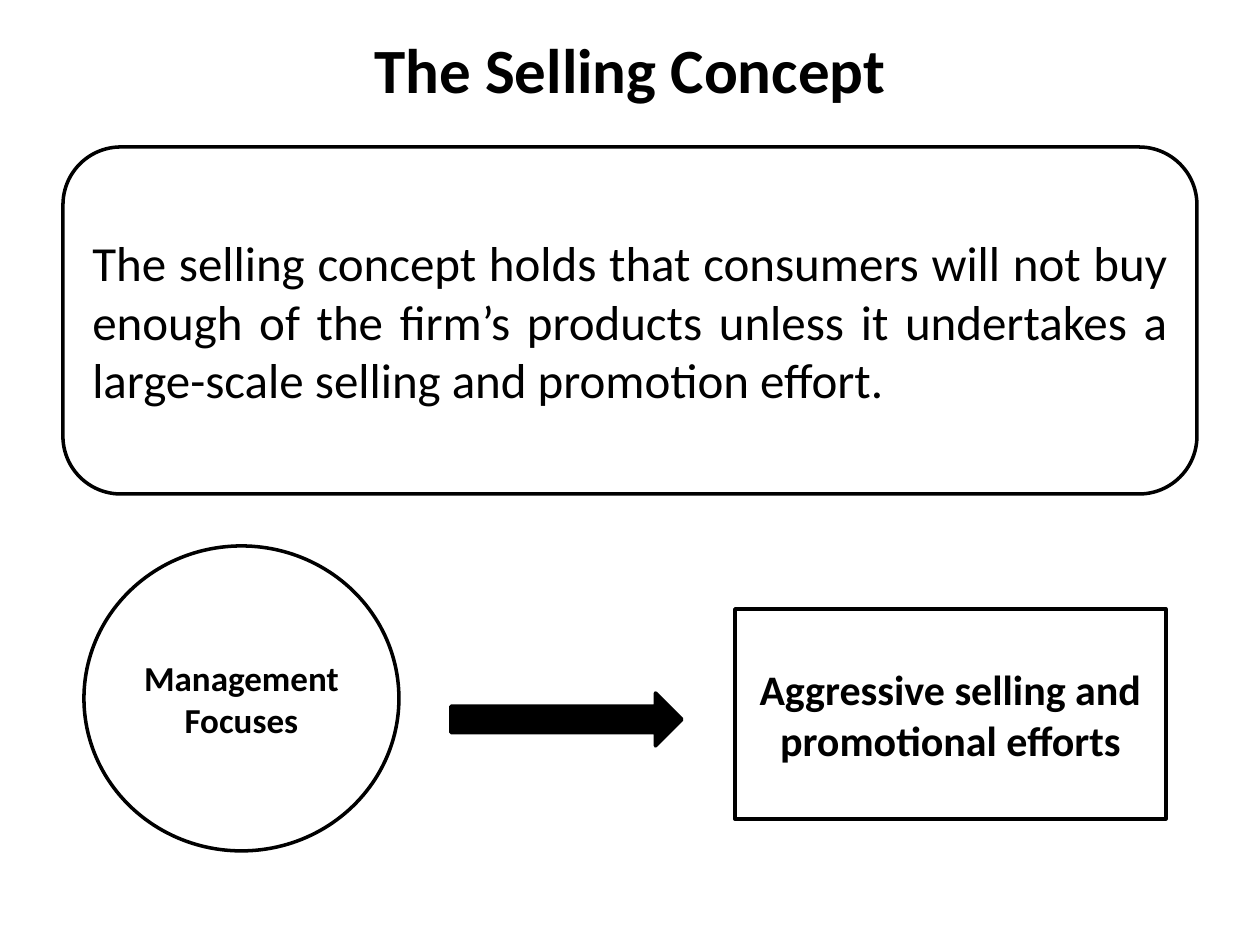
from pptx import Presentation
from pptx.dml.color import RGBColor
from pptx.enum.shapes import MSO_SHAPE
from pptx.enum.text import MSO_ANCHOR, PP_ALIGN
from pptx.util import Emu, Pt

ROUNDED, RECT = MSO_SHAPE.ROUNDED_RECTANGLE, MSO_SHAPE.RECTANGLE
OVAL, ARROW = MSO_SHAPE.OVAL, MSO_SHAPE.RIGHT_ARROW
CENTER, JUSTIFY = PP_ALIGN.CENTER, PP_ALIGN.JUSTIFY
MIDDLE = MSO_ANCHOR.MIDDLE

PX = 914400 // 126
FONT, BLACK, WHITE = "Calibri", "000000", "FFFFFF"

# Content: text, size, bold, alignment; boxes are left, top, width, height in px
TITLE = ("The Selling Concept", 36, True, CENTER)
TITLE_BOX = (63, 21, 1134, 95)
DEFINITION = (
    "The selling concept holds that consumers will not buy enough of the "
    "firm’s products unless it undertakes a large-scale selling and "
    "promotion effort.", 28, False, JUSTIFY)
EFFORTS = ("Aggressive selling and promotional efforts", 24, True, CENTER)
FOCUS = ("Management Focuses", 20, True, CENTER)
PARTS = [
    (ROUNDED, (63, 147, 1134, 347), WHITE, DEFINITION),
    (RECT, (735, 609, 431, 210), WHITE, EFFORTS),
    (OVAL, (84, 546, 315, 305), WHITE, FOCUS),
    (ARROW, (451, 693, 231, 53), BLACK, None),
]


def color(value):
    return RGBColor.from_string(value)


def px(length):
    return Emu(length * PX)


def write(holder, text, size, bold, align):
    frame = holder.text_frame
    frame.text = text
    frame.word_wrap = True
    frame.vertical_anchor = MIDDLE
    paragraph = frame.paragraphs[0]
    paragraph.alignment = align
    font = paragraph.runs[0].font
    font.name, font.size, font.bold = FONT, Pt(size), bold
    font.color.rgb = color(BLACK)


prs = Presentation()
prs.slide_width, prs.slide_height = px(1260), px(945)
slide = prs.slides.add_slide(prs.slide_layouts[5])

# Title
title = slide.shapes.title
title.left, title.top, title.width, title.height = map(px, TITLE_BOX)
write(title, *TITLE)

# Definition, focus, arrow and efforts
for kind, box, fill, label in PARTS:
    part = slide.shapes.add_shape(kind, *map(px, box))
    part.shadow.inherit = False
    part.fill.solid()
    part.fill.fore_color.rgb = color(fill)
    part.line.color.rgb = color(BLACK)
    part.line.width = Pt(2)
    if label:
        write(part, *label)

prs.save("out.pptx")
